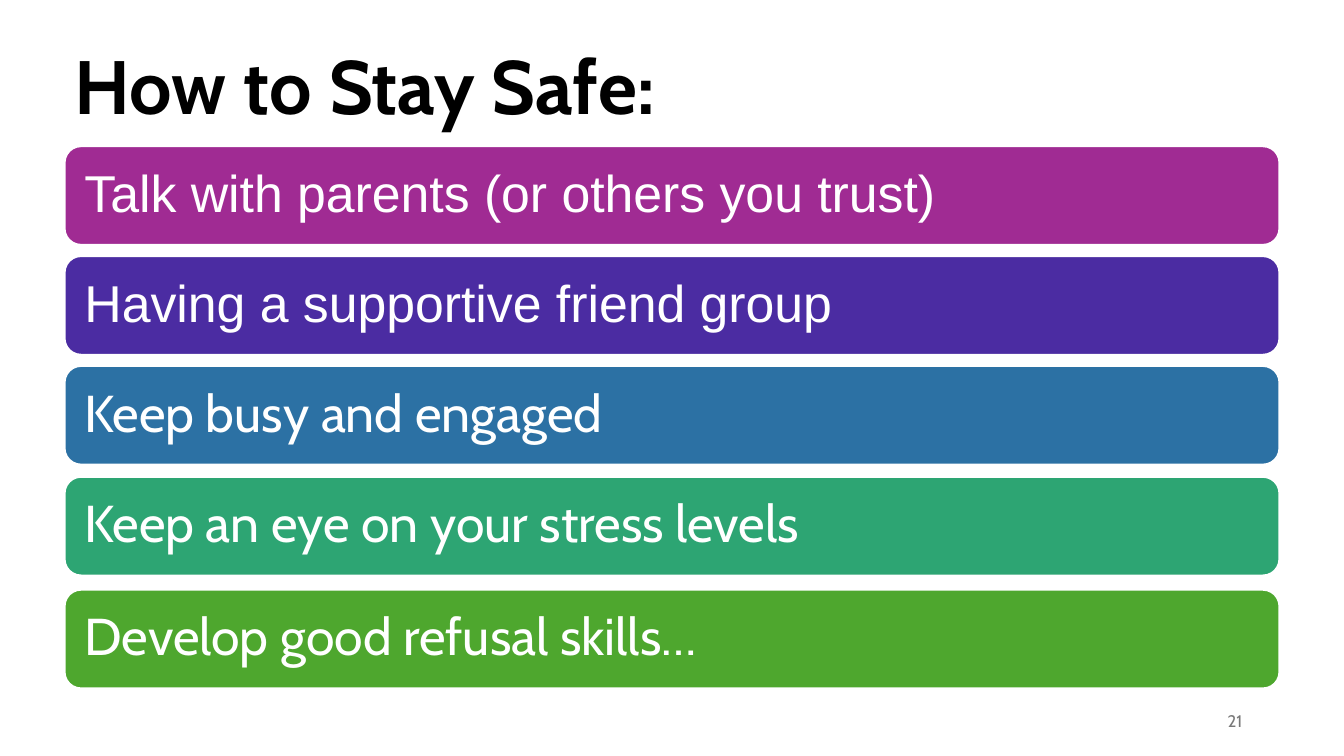
from pptx import Presentation
from pptx.dml.color import RGBColor
from pptx.enum.shapes import MSO_SHAPE
from pptx.enum.text import MSO_ANCHOR, MSO_AUTO_SIZE, PP_ALIGN
from pptx.util import Emu, Pt

PX = 9144  # 100 px to the inch


def px(length):
    return Emu(length * PX)


def color(value):
    return RGBColor.from_string(value)


class SlideBuilder:
    """Holds the style and the current slide."""

    heading_font = "Cabin"
    white = "FFFFFF"

    def __init__(self, deck):
        self.page = deck.slides.add_slide(deck.slide_layouts[5])

    def set_text(self, shape, text, size, font, ink, bold=False,
                 align=PP_ALIGN.LEFT, spacing=0.9, inset=None):
        frame = shape.text_frame
        frame.word_wrap = True
        frame.auto_size = MSO_AUTO_SIZE.NONE
        frame.vertical_anchor = MSO_ANCHOR.MIDDLE
        if inset is not None:
            frame.margin_left = frame.margin_right = px(inset)
            frame.margin_top = frame.margin_bottom = px(inset)
        para = frame.paragraphs[0]
        para.alignment = align
        para.line_spacing = spacing
        span = para.add_run()
        span.text = text
        span.font.name = font
        span.font.size = Pt(size)
        span.font.bold = bold
        span.font.color.rgb = color(ink)

    def title(self, text, left, top, width, height):
        box = self.page.shapes.title
        box.left, box.top = px(left), px(top)
        box.width, box.height = px(width), px(height)
        self.set_text(box, text, 54, self.heading_font, "000000", bold=True)

    def bar(self, text, font, fill, left, top, width, height):
        box = self.page.shapes.add_shape(
            MSO_SHAPE.ROUNDED_RECTANGLE,
            px(left), px(top), px(width), px(height))
        box.shadow.inherit = False
        box.fill.solid()
        box.fill.fore_color.rgb = color(fill)
        box.line.color.rgb = color(self.white)
        box.line.width = Pt(1.5)
        self.set_text(box, text, 37, font, self.white, inset=15)

    def page_number(self, text, left, top, width, height):
        box = self.page.shapes.add_textbox(
            px(left), px(top), px(width), px(height))
        self.set_text(box, text, 12, self.heading_font, "797979",
                      align=PP_ALIGN.RIGHT, spacing=1.0)


# Top, text, font and fill of each bar
TIPS = [
    (145, "Talk with parents (or others you trust)", "Arial", "A02B93"),
    (254, "Having a supportive friend group", "Arial", "4B2CA2"),
    (363, "Keep busy and engaged", "Cabin", "2C71A4"),
    (473, "Keep an eye on your stress levels", "Cabin", "2DA573"),
    (585, "Develop good refusal skills…", "Cabin", "4EA72E"),
]


def main():
    deck = Presentation()
    deck.slide_width, deck.slide_height = px(1333), px(750)
    builder = SlideBuilder(deck)

    # Heading
    builder.title("How to Stay Safe:", 64, 17, 1150, 145)

    # Stack of tips
    for top, text, font, fill in TIPS:
        builder.bar(text, font, fill, 64, top, 1205, 98)

    # Footer
    builder.page_number("21", 942, 695, 300, 40)

    deck.save("out.pptx")


if __name__ == "__main__":
    main()
